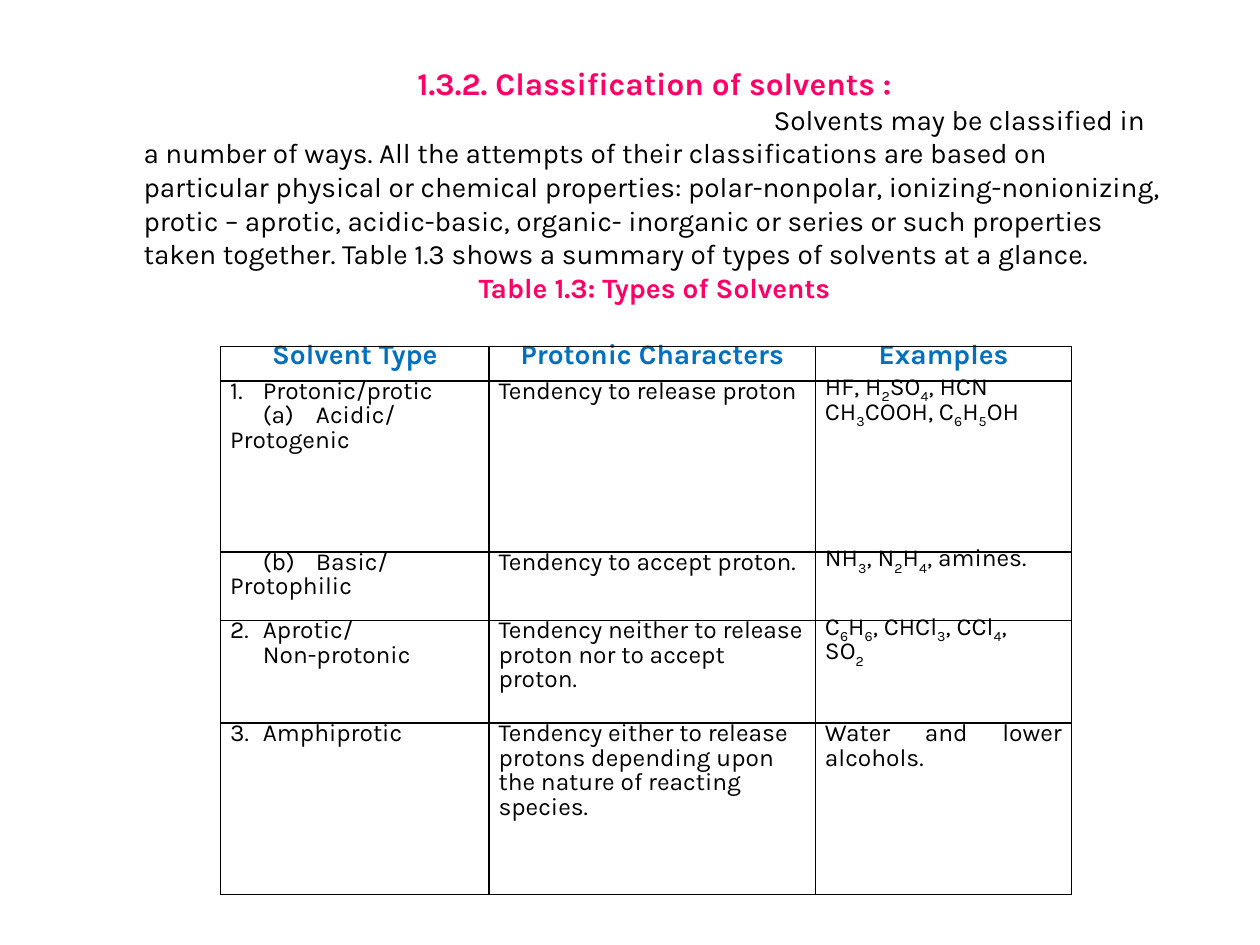
from itertools import groupby

from lxml import etree
from pptx import Presentation
from pptx import util as u
from pptx.dml.color import RGBColor
from pptx.enum import text
from pptx.oxml.ns import qn

FONT = "Karla"
BLACK, PINK, BLUE = "000000", "FF0066", "0070C0"
TAB_STOPS = (0.66, 1.73)
COLUMN_WIDTHS = (5.41, 6.58, 5.16)
ROW_UNIT = 0.69
ROW_UNITS = (1, 5, 2, 3, 5)
TYPE, CHARACTER, EXAMPLES = range(3)

HEADING = "1.3.2. Classification of solvents :"
INTRODUCTION = (
    "Solvents may be classified in a number of ways. All the attempts of their "
    "classifications are based on particular physical or chemical properties: "
    "polar-nonpolar, ionizing-nonionizing, protic – aprotic, acidic-basic, "
    "organic- inorganic or series or such properties taken together. "
    "Table 1.3 shows a summary of types of solvents at a glance."
)
CAPTION = "Table 1.3: Types of Solvents"

HEADERS = ("Solvent Type", "Protonic Characters", "Examples")
SOLVENTS = (
    (("1.\tProtonic/protic", "\t(a)\tAcidic/ Protogenic"),
     ("Tendency to release proton",),
     ("HF, H2SO4, HCN", "CH3COOH, C6H5OH")),
    (("\t(b)\tBasic/ Protophilic",),
     ("Tendency to accept proton.",),
     ("NH3, N2H4, amines.",)),
    (("2.\tAprotic/", "\tNon-protonic"),
     ("Tendency neither to release proton nor to accept proton.",),
     ("C6H6, CHCl3, CCl4, ", "SO2")),
    (("3.\tAmphiprotic",),
     ("Tendency either to release protons depending upon the nature of "
      "reacting species.",),
     ("Water and lower alcohols.",)),
)


def rgb(value):
    return RGBColor.from_string(value)


def add_span(para, words, size, color=BLACK, bold=False):
    span = para.add_run()
    span.text = words
    span.font.name = FONT
    span.font.size = u.Pt(size)
    span.font.bold = bold
    span.font.color.rgb = rgb(color)
    return span


def add_formula(para, formula, size):
    """Write each digit of a chemical formula as a subscript."""
    for is_digit, letters in groupby(formula, str.isdigit):
        span = add_span(para, "".join(letters), size)
        if is_digit:
            span.font._element.set("baseline", "-25000")


def add_para(frame, index, align):
    para = frame.paragraphs[0] if index == 0 else frame.add_paragraph()
    para.alignment = align
    return para


def set_tab_stops(para):
    tabs = etree.SubElement(para._p.get_or_add_pPr(), qn("a:tabLst"))
    for stop in TAB_STOPS:
        etree.SubElement(tabs, qn("a:tab"), pos=str(u.Cm(stop)), algn="l")


def set_borders(cell):
    properties = cell._tc.get_or_add_tcPr()
    for index, side in enumerate(("lnL", "lnR", "lnT", "lnB")):
        line = etree.Element(qn(f"a:{side}"), w=str(u.Pt(1)))
        fill = etree.SubElement(line, qn("a:solidFill"))
        etree.SubElement(fill, qn("a:srgbClr"), val=BLACK)
        properties.insert(index, line)


def fill_cell(cell, lines, column, is_header):
    cell.fill.background()
    set_borders(cell)
    cell.margin_left = cell.margin_right = u.Cm(0.19)
    cell.margin_top = cell.margin_bottom = 0
    if is_header:
        align = text.PP_ALIGN.CENTER
    elif column == CHARACTER:
        align = text.PP_ALIGN.LEFT
    else:
        align = text.PP_ALIGN.JUSTIFY
    for index, words in enumerate(lines):
        para = add_para(cell.text_frame, index, align)
        para.line_spacing = u.Pt(14)
        set_tab_stops(para)
        if is_header:
            add_span(para, words, 16, BLUE, True)
        elif column == EXAMPLES:
            add_formula(para, words, 14)
        else:
            add_span(para, words, 14)


def add_solvent_table(page):
    rows = (tuple((header,) for header in HEADERS),) + SOLVENTS
    frame = page.shapes.add_table(
        len(rows), len(COLUMN_WIDTHS), u.Cm(4.45), u.Cm(6.99),
        u.Cm(sum(COLUMN_WIDTHS)), u.Cm(ROW_UNIT * sum(ROW_UNITS)))
    table = frame.table
    table.horz_banding = False
    for column, width in zip(table.columns, COLUMN_WIDTHS):
        column.width = u.Cm(width)
    for row, units in zip(table.rows, ROW_UNITS):
        row.height = u.Cm(ROW_UNIT * units)
    for row_index, row in enumerate(rows):
        for column, lines in enumerate(row):
            fill_cell(table.cell(row_index, column), lines, column, row_index == 0)


def fill_title(box):
    box.left, box.top = u.Cm(2.64), u.Cm(1.07)
    box.width, box.height = u.Cm(21.11), u.Cm(5.82)
    frame = box.text_frame
    frame.word_wrap = True
    frame.auto_size = text.MSO_AUTO_SIZE.NONE
    frame.vertical_anchor = text.MSO_ANCHOR.TOP
    frame.margin_top = u.Cm(0.23)

    heading = add_para(frame, 0, text.PP_ALIGN.CENTER)
    add_span(heading, HEADING, 18, PINK, True)
    introduction = add_para(frame, 1, text.PP_ALIGN.LEFT)
    introduction._p.get_or_add_pPr().set("indent", str(u.Cm(12.7)))
    add_span(introduction, INTRODUCTION, 16)
    caption = add_para(frame, 2, text.PP_ALIGN.CENTER)
    add_span(caption, CAPTION, 16, PINK, True)


def main():
    deck = Presentation()
    deck.slide_width, deck.slide_height = u.Cm(25.4), u.Cm(19.05)
    page = deck.slides.add_slide(deck.slide_layouts.get_by_name("Title Only"))
    add_solvent_table(page)
    fill_title(page.shapes.title)
    deck.save("out.pptx")


if __name__ == "__main__":
    main()
